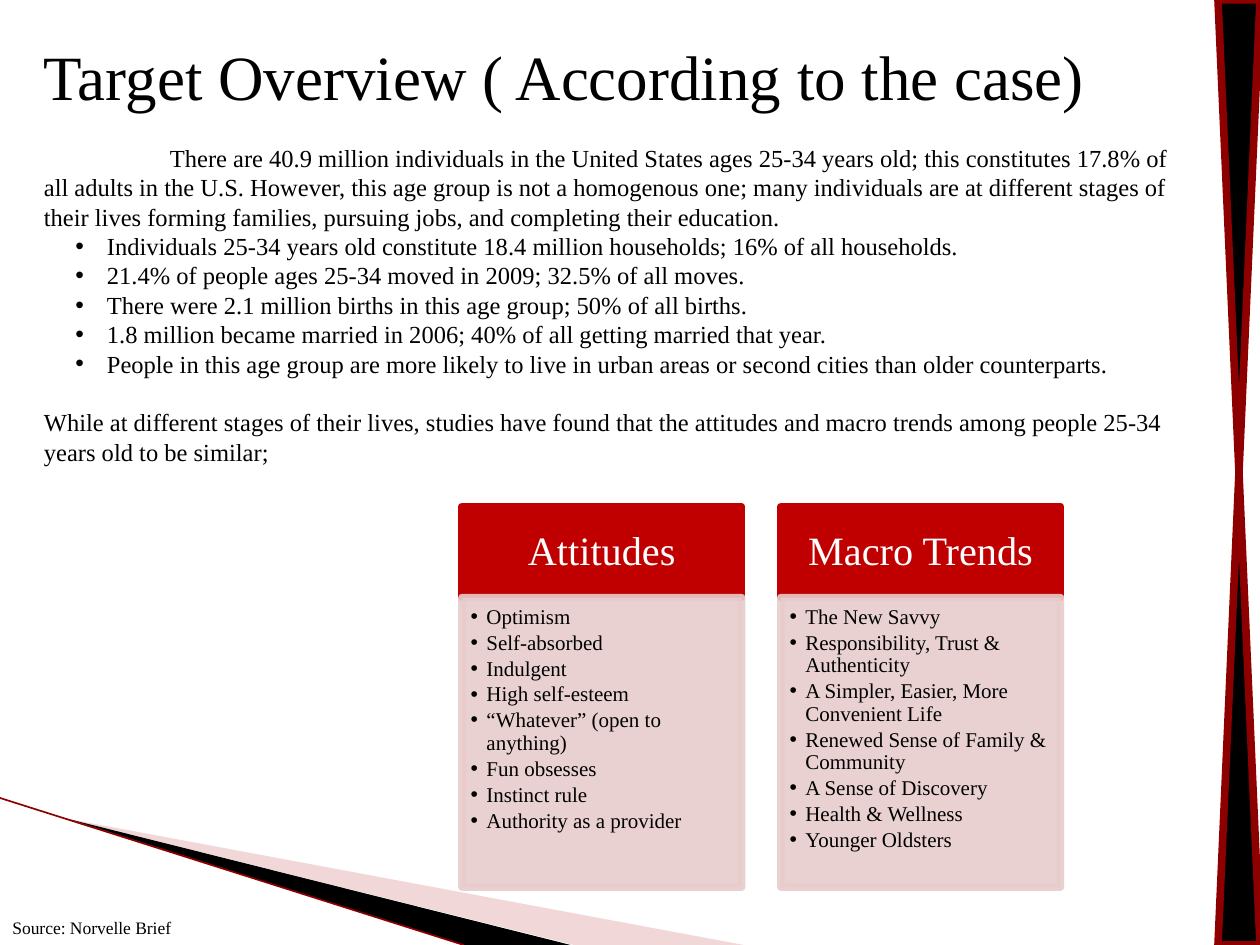
from collections import namedtuple

from lxml.etree import SubElement
from pptx import Presentation
from pptx.dml.color import RGBColor
from pptx.enum.shapes import MSO_CONNECTOR as Connector, MSO_SHAPE as Shape
from pptx.enum.text import MSO_ANCHOR as Anchor, PP_ALIGN as Align
from pptx.oxml.ns import qn
from pptx.util import Pt

Box = namedtuple("Box", "left top width height")

FONT = "Times New Roman"
BLACK, WHITE, RED, DARK_RED = "000000", "FFFFFF", "C00000", "8E0000"
CARD_PINK, WEDGE_PINK = "E8CCCC", "DD9D9D"

TITLE = "Target Overview ( According to the case)"
INTRO = (
    "There are 40.9 million individuals in the United States ages 25-34 years old; "
    "this constitutes 17.8% of all adults in the U.S. However, this age group is not "
    "a homogenous one; many individuals are at different stages of their lives forming "
    "families, pursuing jobs, and completing their education."
)
FACTS = [
    "Individuals 25-34 years old constitute 18.4 million households; 16% of all households.",
    "21.4% of people ages 25-34 moved in 2009; 32.5% of all moves.",
    "There were 2.1 million births in this age group; 50% of all births.",
    "1.8 million became married in 2006; 40% of all getting married that year.",
    "People in this age group are more likely to live in urban areas or second cities "
    "than older counterparts.",
]
CLOSING = (
    "While at different stages of their lives, studies have found that the attitudes "
    "and macro trends among people 25-34 years old to be similar;"
)
CARDS = {
    "Attitudes": [
        "Optimism", "Self-absorbed", "Indulgent", "High self-esteem",
        "“Whatever” (open to anything)", "Fun obsesses", "Instinct rule",
        "Authority as a provider",
    ],
    "Macro Trends": [
        "The New Savvy", "Responsibility, Trust & Authenticity",
        "A Simpler, Easier, More Convenient Life",
        "Renewed Sense of Family & Community", "A Sense of Discovery",
        "Health & Wellness", "Younger Oldsters",
    ],
}


def color(hex_string):
    return RGBColor.from_string(hex_string)


def points(*values):
    return [Pt(value) for value in values]


def paint(shape, fill, line=None, opacity=100):
    """Fill and outline a shape; opacity is in percent."""
    shape.shadow.inherit = False
    shape.fill.solid()
    shape.fill.fore_color.rgb = color(fill)
    if line:
        shape.line.color.rgb = color(line)
        shape.line.width = Pt(4.33)
    else:
        shape.line.fill.background()
    if opacity < 100:
        for tint in shape._element.spPr.iter(qn("a:srgbClr")):
            SubElement(tint, qn("a:alpha"), val=str(opacity * 1000))


def set_frame(frame, insets, anchor=Anchor.TOP):
    frame.word_wrap = True
    frame.vertical_anchor = anchor
    (frame.margin_left, frame.margin_top,
     frame.margin_right, frame.margin_bottom) = points(*insets)


def add_text(frame, text, size, hue=BLACK, align=Align.LEFT, indent=(0, 0),
             bullet=False, before=0, after=0, spacing=1.0):
    """Write one paragraph, using the frame's first one while it is empty."""
    para = frame.paragraphs[0]
    if para.runs:
        para = frame.add_paragraph()
    margin, first_line = points(*indent)
    properties = para._p.get_or_add_pPr()
    properties.set("marL", str(margin))
    properties.set("indent", str(first_line))
    if bullet:
        SubElement(properties, qn("a:buFont"), typeface="Arial")
        SubElement(properties, qn("a:buChar"), char="•")
    para.alignment = align
    para.line_spacing = spacing
    para.space_before, para.space_after = points(before, after)
    span = para.add_run()
    span.text = text
    span.font.name = FONT
    span.font.size = Pt(size)
    span.font.color.rgb = color(hue)


def add_wedge(page, corners, fill, opacity=100):
    start, *others = [points(*corner) for corner in corners]
    builder = page.shapes.build_freeform(*start, scale=1.0)
    builder.add_line_segments(others, close=True)
    paint(builder.convert_to_shape(), fill, opacity=opacity)


def add_corner(page, box):
    """Crossing wedges in the bottom left corner."""
    left, top, width, height = box
    bottom = top + height
    tip = (left + 39, top + 12)
    add_wedge(page, [tip, (left + width, bottom), (left + 328, bottom)], WEDGE_PINK, 40)
    add_wedge(page, [tip, (left + 326, bottom), (left + 265, bottom)], BLACK)
    edge = page.shapes.add_connector(
        Connector.STRAIGHT, *points(left, top, left + 265, bottom))
    edge.line.color.rgb = color(DARK_RED)
    edge.line.width = Pt(0.95)
    SubElement(edge._element.spPr, qn("a:effectLst"))


def add_overview(page, box):
    """Title, introduction, facts and closing sentence."""
    frame = page.shapes.add_textbox(*points(*box)).text_frame
    set_frame(frame, (7.2, 3.6, 7.2, 3.6))
    add_text(frame, TITLE, 36)
    add_text(frame, INTRO, 14, indent=(0, 72), before=16.8)
    for fact in FACTS:
        add_text(frame, fact, 14, indent=(36, -18), bullet=True)
    add_text(frame, CLOSING, 14, before=16.8)


def add_card(page, box, heading, items):
    """Red heading above a pale bulleted list."""
    left, top, width, height = box
    head_height = 52
    head = page.shapes.add_shape(
        Shape.RECTANGLE, *points(left, top, width, head_height))
    paint(head, RED, RED)
    set_frame(head.text_frame, (12.8, 7.3, 12.8, 7.3), Anchor.MIDDLE)
    add_text(head.text_frame, heading, 23, WHITE, Align.CENTER, spacing=0.9)

    body = page.shapes.add_shape(
        Shape.RECTANGLE, *points(left, top + head_height, width, height - head_height))
    paint(body, CARD_PINK, CARD_PINK, opacity=90)
    set_frame(body.text_frame, (5, 5, 6.5, 7.2))
    for item in items:
        add_text(body.text_frame, item, 12, indent=(9, -9), bullet=True,
                 after=1.8, spacing=0.9)


def add_cards(page, box, gap):
    """Equal cards side by side."""
    width = (box.width - gap * (len(CARDS) - 1)) / len(CARDS)
    for column, (heading, items) in enumerate(CARDS.items()):
        left = box.left + column * (width + gap)
        add_card(page, Box(left, box.top, width, box.height), heading, items)


def add_ribbon(page, box):
    """Hourglass strip along the right edge."""
    paint(page.shapes.add_shape(Shape.FLOWCHART_COLLATE, *points(*box)), BLACK, DARK_RED)


def add_source(page, box):
    frame = page.shapes.add_textbox(*points(*box)).text_frame
    set_frame(frame, (7.2, 3.6, 7.2, 3.6))
    add_text(frame, "Source: Norvelle Brief", 10)


def main():
    deck = Presentation()
    deck.slide_width, deck.slide_height = points(720, 540)
    page = deck.slides.add_slide(deck.slide_layouts[6])
    add_corner(page, Box(0, 456, 425, 84))
    add_overview(page, Box(18, 18, 672, 303))
    add_cards(page, Box(264, 289.5, 342, 217.5), gap=22.4)
    add_ribbon(page, Box(696, 0, 24, 540))
    add_source(page, Box(0, 520.6, 150, 19.4))
    deck.save("out.pptx")


if __name__ == "__main__":
    main()
